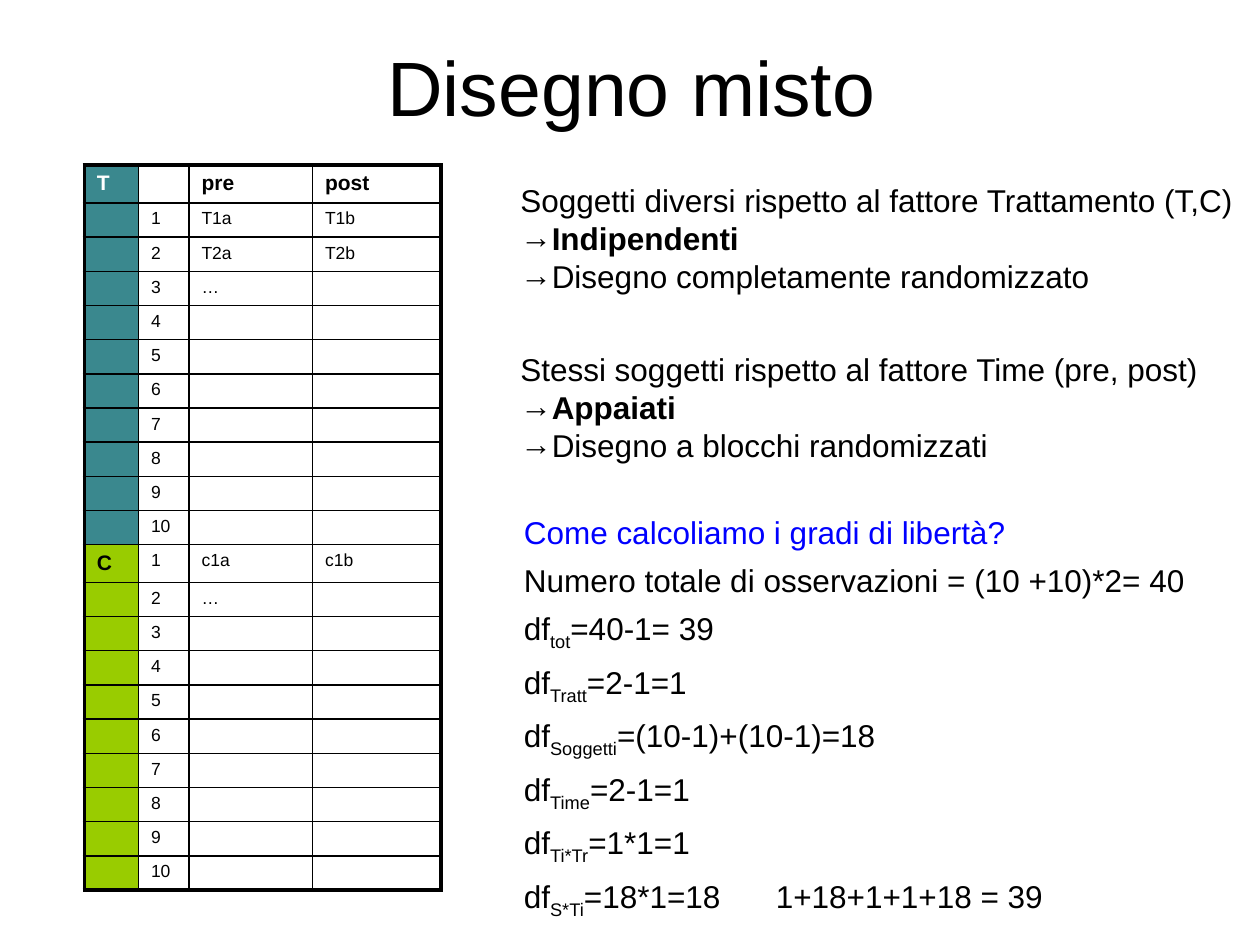
from lxml import etree
from pptx import Presentation, util as u
from pptx.dml.color import RGBColor
from pptx.enum import text
from pptx.oxml.ns import qn

FONT = "Arial"
BLACK, WHITE, BLUE = "000000", "FFFFFF", "0000FF"

TITLE = "Disegno misto"
HEADER = ("pre", "post")
SUBJECTS = 10
# label, label colour, fill, first measurements
GROUPS = [
    ("T", WHITE, "3A888E", [("T1a", "T1b"), ("T2a", "T2b"), ("…", "")]),
    ("C", BLACK, "99CC00", [("c1a", "c1b"), ("…", "")]),
]
COLUMN_WIDTHS = (1.09, 1.02, 2.49, 2.59)
LABEL_ROW_HEIGHT, ROW_HEIGHT = 0.76, 0.69

# top, width, factor, relation between observations, design
FACTORS = [
    (3.53, 15.16, "Soggetti diversi rispetto al fattore Trattamento (T,C)",
     "Indipendenti", "Disegno completamente randomizzato"),
    (6.93, 14.2, "Stessi soggetti rispetto al fattore Time (pre, post)",
     "Appaiati", "Disegno a blocchi randomizzati"),
]
QUESTION = "Come calcoliamo i gradi di libertà?"
TOTAL = "Numero totale di osservazioni = (10 +10)*2= 40"
DEGREES = [
    ("tot", "=40-1= 39"),
    ("Tratt", "=2-1=1"),
    ("Soggetti", "=(10-1)+(10-1)=18"),
    ("Time", "=2-1=1"),
    ("Ti*Tr", "=1*1=1"),
    ("S*Ti", "=18*1=18\t1+18+1+1+18 = 39"),
]


def style(run, size, colour=BLACK, bold=False):
    run.font.name = FONT
    run.font.size = u.Pt(size)
    run.font.bold = bold
    run.font.color.rgb = RGBColor.from_string(colour)


def add_box(slide, left, top, width, height, lines, wrap=True):
    """Add a text box with one paragraph per line and return its text frame."""
    box = slide.shapes.add_textbox(u.Cm(left), u.Cm(top), u.Cm(width), u.Cm(height))
    frame = box.text_frame
    frame.word_wrap = wrap
    frame.text = "\n".join(lines)
    return frame


def add_arrow_bullet(paragraph):
    properties = paragraph._p.get_or_add_pPr()
    etree.SubElement(properties, qn("a:buFont"), typeface=FONT)
    etree.SubElement(properties, qn("a:buChar"), char="→")


def set_borders(cell, widths):
    """Draw left, right, top and bottom borders; the fill must be set later."""
    properties = cell._tc.get_or_add_tcPr()
    for side, width in zip("LRTB", widths):
        line = etree.SubElement(properties, qn(f"a:ln{side}"), w=str(u.Pt(width)))
        fill = etree.SubElement(line, qn("a:solidFill"))
        etree.SubElement(fill, qn("a:srgbClr"), val=BLACK)


def fill_cell(cell, content, size, colour, bold, fill, borders):
    set_borders(cell, borders)
    if fill:
        cell.fill.solid()
        cell.fill.fore_color.rgb = RGBColor.from_string(fill)
    else:
        cell.fill.background()
    paragraph = cell.text_frame.paragraphs[0]
    paragraph.text = content
    for run in paragraph.runs:
        style(run, size, colour, bold)
    if not content:
        etree.SubElement(paragraph._p, qn("a:endParaRPr"), sz=str(size * 100))


def add_design_table(slide):
    rows = [(("T", "", *HEADER), WHITE, GROUPS[0][2])]
    for label, colour, fill, measures in GROUPS:
        for subject in range(SUBJECTS):
            values = measures[subject] if subject < len(measures) else ("", "")
            # the first group's label sits in the header row
            shown = label if subject == 0 and label != "T" else ""
            rows.append(((shown, str(subject + 1), *values), colour, fill))

    heights = [LABEL_ROW_HEIGHT if cells[0] else ROW_HEIGHT for cells, _, _ in rows]
    table = slide.shapes.add_table(
        len(rows), len(COLUMN_WIDTHS), u.Cm(1.7), u.Cm(3.33),
        u.Cm(sum(COLUMN_WIDTHS)), u.Cm(sum(heights))).table
    table.first_row = table.horz_banding = False
    for column, width in zip(table.columns, COLUMN_WIDTHS):
        column.width = u.Cm(width)

    last_row, last_column = len(rows) - 1, len(COLUMN_WIDTHS) - 1
    for r, (cells, colour, fill) in enumerate(rows):
        table.rows[r].height = u.Cm(heights[r])
        for c, content in enumerate(cells):
            heading = bool(content) and (r == 0 or c == 0)
            outer = (c == 0, c == last_column, r == 0, r == last_row)
            fill_cell(table.cell(r, c), content, 12 if heading else 10,
                      colour if c == 0 else BLACK, heading,
                      fill if c == 0 else None,
                      [2.25 if edge else 1 for edge in outer])


def add_factors(slide):
    for top, width, *lines in FACTORS:
        frame = add_box(slide, 10.24, top, width, 2.54, lines, wrap=False)
        for i, paragraph in enumerate(frame.paragraphs):
            if i > 0:
                add_arrow_bullet(paragraph)
            style(paragraph.runs[0], 18, bold=i == 1)


def add_degrees_of_freedom(slide):
    lines = [QUESTION, TOTAL] + ["df"] * len(DEGREES)
    frame = add_box(slide, 10.31, 10.21, 13.87, 7.9, lines)
    paragraphs = frame.paragraphs
    for paragraph, (source, formula) in zip(paragraphs[2:], DEGREES):
        subscript = paragraph.add_run()
        subscript.text = source
        subscript.font._element.set("baseline", "-25000")
        paragraph.add_run().text = formula
    for i, paragraph in enumerate(paragraphs):
        paragraph.space_after = u.Pt(6)
        for run in paragraph.runs:
            style(run, 18, BLUE if i == 0 else BLACK)


def main():
    deck = Presentation()
    deck.slide_width, deck.slide_height = u.Cm(25.4), u.Cm(19.05)
    slide = deck.slides.add_slide(deck.slide_layouts[6])

    add_design_table(slide)
    title = add_box(slide, 1.3, 0.13, 22.86, 3.18, [TITLE])
    title.vertical_anchor = text.MSO_ANCHOR.MIDDLE
    title.paragraphs[0].alignment = text.PP_ALIGN.CENTER
    style(title.paragraphs[0].runs[0], 44)
    add_factors(slide)
    add_degrees_of_freedom(slide)

    deck.save("out.pptx")


if __name__ == "__main__":
    main()
